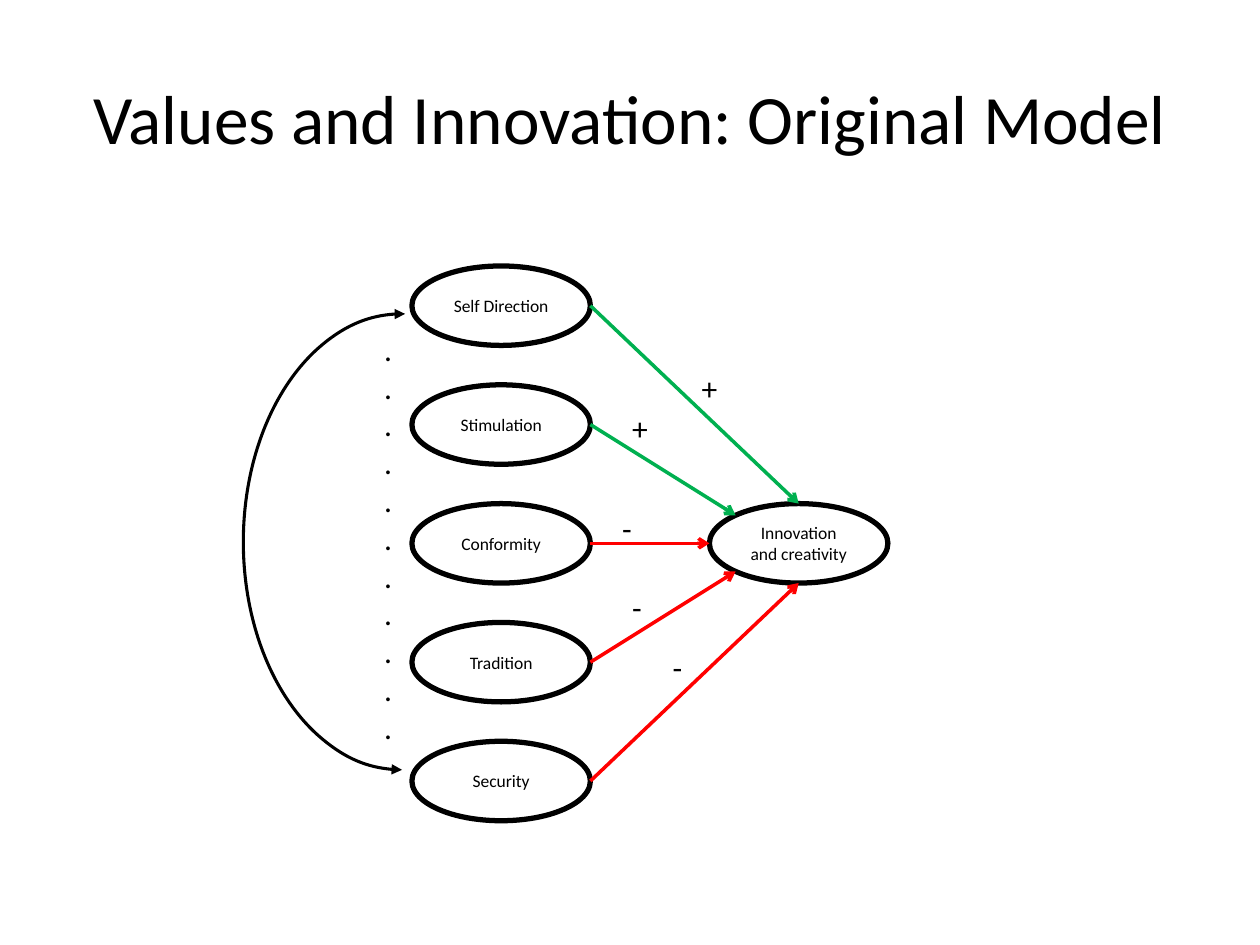
from math import cos, radians, sin

from lxml.etree import SubElement
from pptx import Presentation
from pptx.dml.color import RGBColor
from pptx.enum.shapes import MSO_CONNECTOR, MSO_SHAPE
from pptx.enum.text import MSO_ANCHOR, PP_ALIGN
from pptx.oxml.ns import qn
from pptx.util import Pt

BLACK, GREEN, RED = "000000", "00B050", "FF0000"


def color(code):
    return RGBColor.from_string(code)


def write(shape, text, size, align=PP_ALIGN.LEFT, anchor=MSO_ANCHOR.TOP, wrap=True):
    frame = shape.text_frame
    frame.text = text
    frame.word_wrap = wrap
    frame.vertical_anchor = anchor
    for par in frame.paragraphs:
        par.alignment = align
        for run in par.runs:
            run.font.name = "Calibri"
            run.font.size = Pt(size)
            run.font.color.rgb = color(BLACK)


deck = Presentation()
deck.slide_width, deck.slide_height = Pt(720), Pt(540)
shapes = deck.slides.add_slide(deck.slide_layouts[6]).shapes

title = shapes.add_textbox(Pt(36), Pt(21.6), Pt(648), Pt(90))
write(title, "Values and Innovation: Original Model", 39.6,
      PP_ALIGN.CENTER, MSO_ANCHOR.MIDDLE)

# Five values in a column, and the outcome level with the third
wide, high = 102, 45.4
left, top, step = 235.4, 152, 67.9
goal_x, goal_y = 405.4, top + 2 * step
values = ["Self Direction", "Stimulation", "Conformity", "Tradition", "Security"]
nodes = [(name, left, top + i * step) for i, name in enumerate(values)]
nodes.append(("Innovation and creativity", goal_x, goal_y))
for name, x, y in nodes:
    oval = shapes.add_shape(MSO_SHAPE.OVAL, Pt(x), Pt(y), Pt(wide), Pt(high))
    oval.shadow.inherit = False
    oval.fill.background()
    oval.line.color.rgb = color(BLACK)
    oval.line.width = Pt(3)
    write(oval, name, 10, PP_ALIGN.CENTER, MSO_ANCHOR.MIDDLE)

# Each arrow ends on the rim of the outcome, 45 degrees after the last one
for i, tint in enumerate([GREEN, GREEN, RED, RED, RED]):
    turn = radians(270 - 45 * i)
    link = shapes.add_connector(
        MSO_CONNECTOR.STRAIGHT,
        Pt(left + wide), Pt(top + i * step + high / 2),
        Pt(goal_x + wide / 2 * (1 + cos(turn))),
        Pt(goal_y + high / 2 * (1 + sin(turn))))
    link.line.color.rgb = color(tint)
    link.line.width = Pt(2)
    SubElement(link.line._get_or_add_ln(), qn("a:tailEnd"), type="arrow")
    SubElement(link._element.spPr, qn("a:effectLst"))

signs = [("+", 393.8, 207.4), ("+", 354.2, 230.4), ("-", 348.5, 287.3),
         ("-", 354.2, 332.6), ("-", 377.3, 366.5)]
for sign, x, y in signs:
    box = shapes.add_textbox(Pt(x), Pt(y), Pt(24 if sign == "+" else 20), Pt(29))
    write(box, sign, 18, wrap=False)

arc = shapes.add_shape(MSO_SHAPE.ARC, Pt(139), Pt(179.3), Pt(181.4), Pt(260.6))
arc.adjustments[0], arc.adjustments[1] = 162, 54.46
arc.rotation = 180
arc.shadow.inherit = False
arc.fill.background()
arc.line.color.rgb = color(BLACK)
arc.line.width = Pt(1.75)
for end in ("a:headEnd", "a:tailEnd"):
    SubElement(arc.line._get_or_add_ln(), qn(end), type="triangle")

dots = shapes.add_textbox(Pt(212.4), Pt(185), Pt(22.3), Pt(269.3))
write(dots, "\n".join("." * 11), 18)

deck.save("out.pptx")
